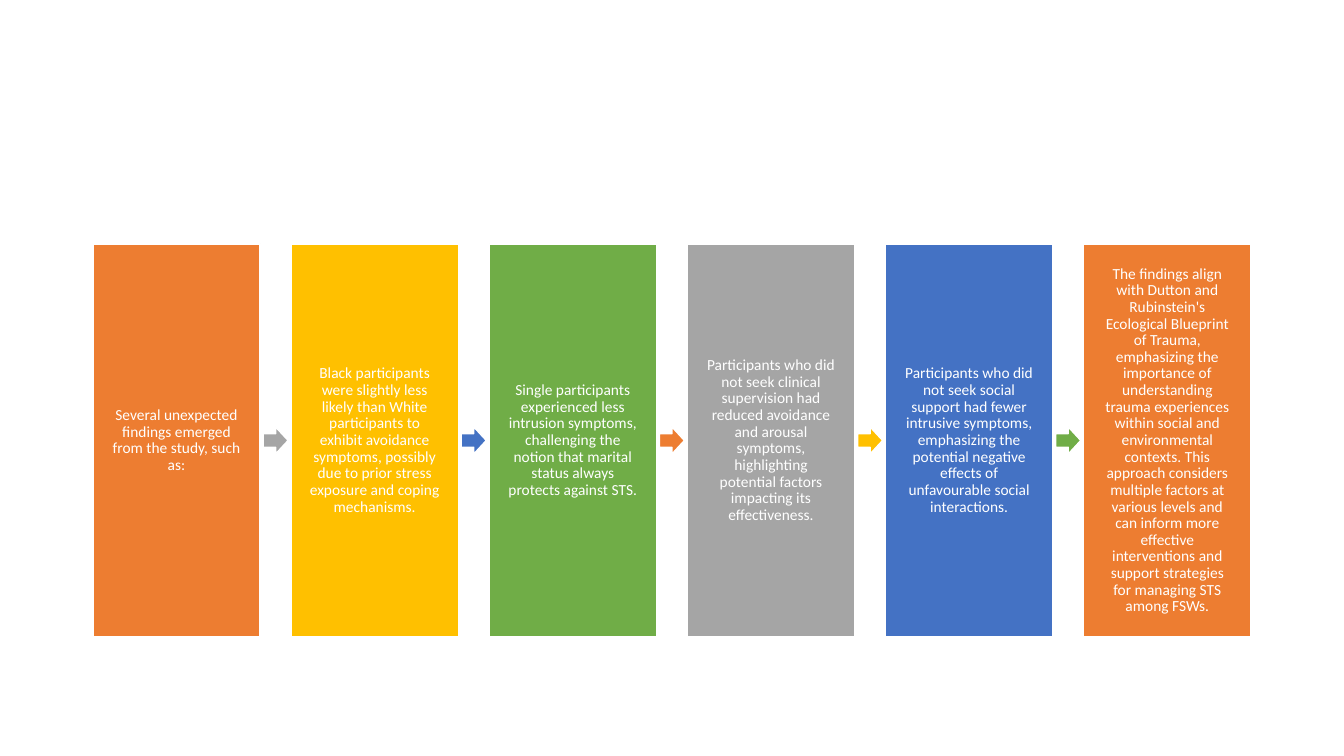
from dataclasses import dataclass

from pptx import Presentation
from pptx.dml.color import RGBColor
from pptx.enum.shapes import MSO_SHAPE
from pptx.enum.text import MSO_ANCHOR, PP_ALIGN
from pptx.util import Pt

RECT, ARROW = MSO_SHAPE.RECTANGLE, MSO_SHAPE.RIGHT_ARROW
MIDDLE, CENTER = MSO_ANCHOR.MIDDLE, PP_ALIGN.CENTER
SLIDE_W, SLIDE_H = 1344, 756
EMU_PER_PX = 12192000 / SLIDE_W


@dataclass(frozen=True)
class Theme:
    font: str = "Calibri"
    body_size: int = 11
    line_width: int = 1
    white: str = "FFFFFF"
    # orange, gold, green, grey, blue
    accents: tuple = ("ED7D31", "FFC000", "70AD47", "A5A5A5", "4472C4")


THEME = Theme()

FINDINGS = [
    "Several unexpected findings emerged from the study, such as:",
    "Black participants were slightly less likely than White participants to "
    "exhibit avoidance symptoms, possibly due to prior stress exposure and "
    "coping mechanisms.",
    "Single participants experienced less intrusion symptoms, challenging the "
    "notion that marital status always protects against STS.",
    "Participants who did not seek clinical supervision had reduced avoidance "
    "and arousal symptoms, highlighting potential factors impacting its "
    "effectiveness.",
    "Participants who did not seek social support had fewer intrusive "
    "symptoms, emphasizing the potential negative effects of unfavourable "
    "social interactions.",
    "The findings align with Dutton and Rubinstein's Ecological Blueprint of "
    "Trauma, emphasizing the importance of understanding trauma experiences "
    "within social and environmental contexts. This approach considers "
    "multiple factors at various levels and can inform more effective "
    "interventions and support strategies for managing STS among FSWs.",
]


def px(n):
    return round(n * EMU_PER_PX)


def accent(i):
    return THEME.accents[i % len(THEME.accents)]


def add_block(slide, kind, box, fill):
    """Filled preset shape with a thin white outline."""
    sp = slide.shapes.add_shape(kind, *(px(n) for n in box))
    sp.shadow.inherit = False
    sp.fill.solid()
    sp.fill.fore_color.rgb = RGBColor.from_string(fill)
    sp.line.color.rgb = RGBColor.from_string(THEME.white)
    sp.line.width = Pt(THEME.line_width)
    return sp


def set_text(sp, text, inset=17):
    tf = sp.text_frame
    tf.word_wrap = True
    tf.vertical_anchor = MIDDLE
    tf.margin_left = tf.margin_right = px(inset)
    tf.margin_top = tf.margin_bottom = px(inset)
    tf.text = text
    p = tf.paragraphs[0]
    p.alignment = CENTER
    p.line_spacing = 0.9
    font = p.runs[0].font
    font.name = THEME.font
    font.size = Pt(THEME.body_size)
    font.color.rgb = RGBColor.from_string(THEME.white)


def add_process(slide, box, steps, gap=31):
    """Equal columns across the box, with an arrow in each gap."""
    left, top, width, height = box
    step_w = (width - gap * (len(steps) - 1)) / len(steps)
    arrow_w, arrow_h = 25, 27
    for i, text in enumerate(steps):
        x = left + i * (step_w + gap)
        # Step column
        sp = add_block(slide, RECT, (x, top, step_w, height), accent(i))
        set_text(sp, text)
        # Arrow to the next step
        if i < len(steps) - 1:
            arrow_x = x + step_w + (gap - arrow_w) / 2
            arrow_y = top + (height - arrow_h) / 2
            add_block(slide, ARROW, (arrow_x, arrow_y, arrow_w, arrow_h),
                      accent(i + 3))


def main():
    prs = Presentation()
    prs.slide_width, prs.slide_height = px(SLIDE_W), px(SLIDE_H)
    slide = prs.slides.add_slide(prs.slide_layouts[6])
    add_process(slide, (93, 244, 1158, 393), FINDINGS)
    prs.save("out.pptx")


if __name__ == "__main__":
    main()
